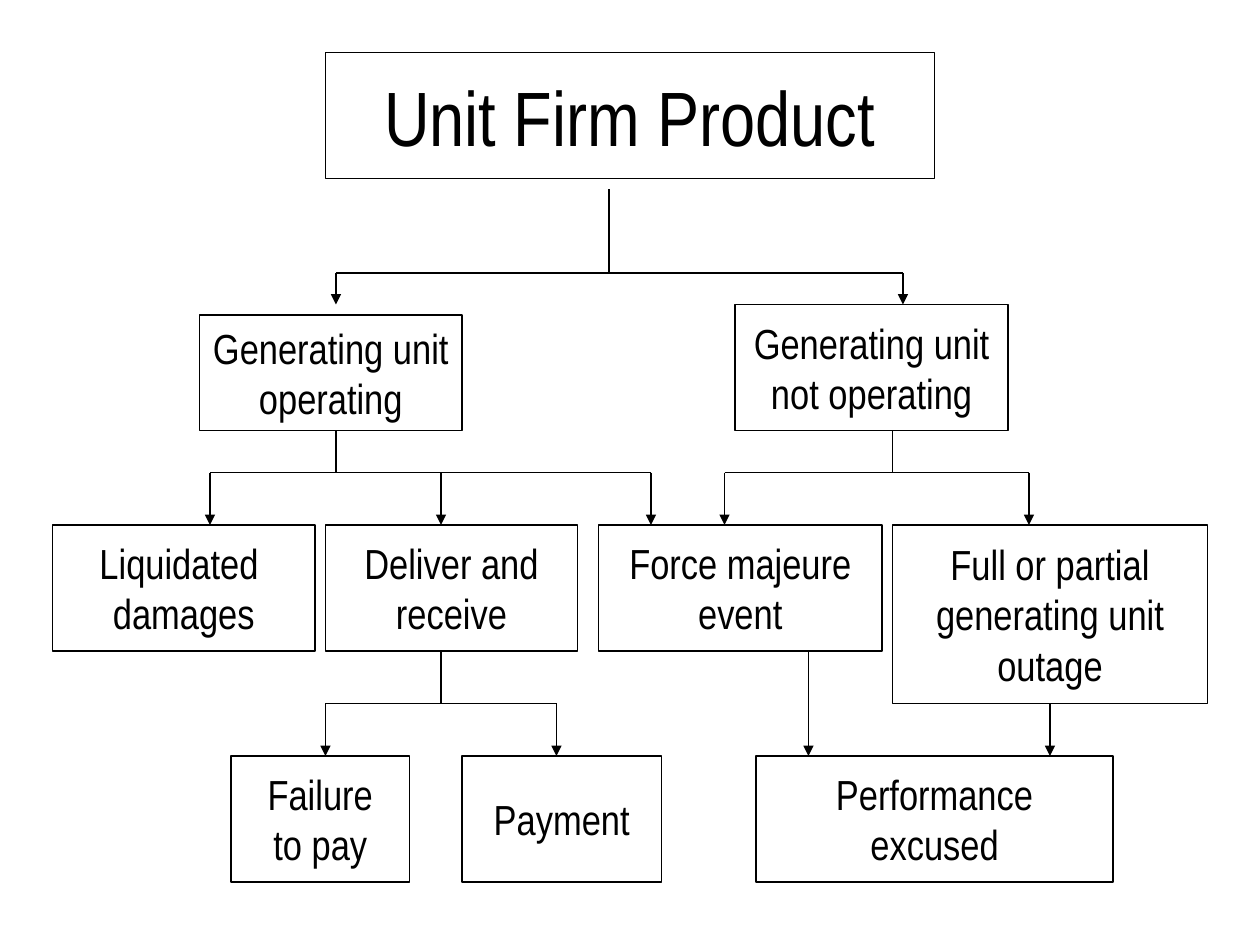
from pptx import Presentation
from pptx.dml.color import RGBColor
from pptx.enum.shapes import MSO_CONNECTOR, MSO_SHAPE
from pptx.enum.text import MSO_ANCHOR, MSO_AUTO_SIZE, PP_ALIGN
from pptx.oxml.ns import qn
from pptx.util import Inches, Pt
from lxml.etree import SubElement

BLACK = RGBColor(0, 0, 0)
WHITE = RGBColor(255, 255, 255)
FONT = "Arial Narrow"
OUTLINE = Pt(0.75)
CELL = Inches(1) // 12  # the slide is a grid of 120 columns by 90 rows

TITLE_BOX = (31, 5, 58, 12)
# Text and box: column, row, columns wide, rows high
STEPS = [
    ("Generating unit\noperating", (19, 30, 25, 11)),
    ("Generating unit\vnot operating", (70, 29, 26, 12)),
    ("Liquidated \ndamages", (5, 50, 25, 12)),
    ("Deliver and\nreceive", (31, 50, 24, 12)),
    ("Force majeure\nevent", (57, 50, 27, 12)),
    ("Full or partial\ngenerating unit\noutage", (85, 50, 30, 17)),
    ("Failure\nto pay", (22, 72, 17, 12)),
    ("Payment", (44, 72, 19, 12)),
    ("Performance\nexcused", (72, 72, 34, 12)),
]
# Stem column, rows of stem top, crossbar and arrow tips, arrow columns
BRANCHES = [
    (58, 18, 26, 29, (32, 86)),
    (32, 41, 45, 50, (20, 42, 62)),
    (85, 41, 45, 50, (69, 98)),
    (42, 62, 67, 72, (31, 53)),
]
# Column, start row, tip row
EXCUSE_ARROWS = [(77, 62, 72), (100, 67, 72)]


def format_box(shape, text, size):
    shape.line.color.rgb = BLACK
    shape.line.width = OUTLINE
    frame = shape.text_frame
    frame.text = text
    frame.word_wrap = False
    frame.auto_size = MSO_AUTO_SIZE.NONE
    frame.vertical_anchor = MSO_ANCHOR.MIDDLE
    for paragraph in frame.paragraphs:
        paragraph.alignment = PP_ALIGN.CENTER
        paragraph.font.name = FONT
        paragraph.font.size = Pt(size)
        paragraph.font.color.rgb = BLACK


def add_title(slide, text, box):
    title = slide.shapes.title
    title.left, title.top, title.width, title.height = (n * CELL for n in box)
    format_box(title, text, 44)


def add_step(slide, text, box):
    step = slide.shapes.add_shape(MSO_SHAPE.RECTANGLE, *(n * CELL for n in box))
    step.shadow.inherit = False
    step.fill.solid()
    step.fill.fore_color.rgb = WHITE
    format_box(step, text, 24)


def add_line(slide, start, end, arrow=False):
    line = slide.shapes.add_connector(
        MSO_CONNECTOR.STRAIGHT, *(n * CELL for n in (*start, *end)))
    line.line.color.rgb = BLACK
    line.line.width = OUTLINE
    properties = line._element.spPr
    if arrow:
        SubElement(properties.find(qn("a:ln")), qn("a:tailEnd"), type="triangle")
    SubElement(properties, qn("a:effectLst"))


def add_branch(slide, stem, top, crossbar, tip, drops):
    """Draw a stem that splits along a crossbar into downward arrows."""
    add_line(slide, (stem, top), (stem, crossbar))
    add_line(slide, (min(drops), crossbar), (max(drops), crossbar))
    for drop in drops:
        add_line(slide, (drop, crossbar), (drop, tip), arrow=True)


def build_flowchart(slide):
    add_title(slide, "Unit Firm Product", TITLE_BOX)
    for text, box in STEPS:
        add_step(slide, text, box)
    for branch in BRANCHES:
        add_branch(slide, *branch)
    for column, start, tip in EXCUSE_ARROWS:
        add_line(slide, (column, start), (column, tip), arrow=True)


def main():
    deck = Presentation()
    deck.slide_width, deck.slide_height = 120 * CELL, 90 * CELL
    build_flowchart(deck.slides.add_slide(deck.slide_layouts.get_by_name("Title Only")))
    deck.save("out.pptx")


if __name__ == "__main__":
    main()
